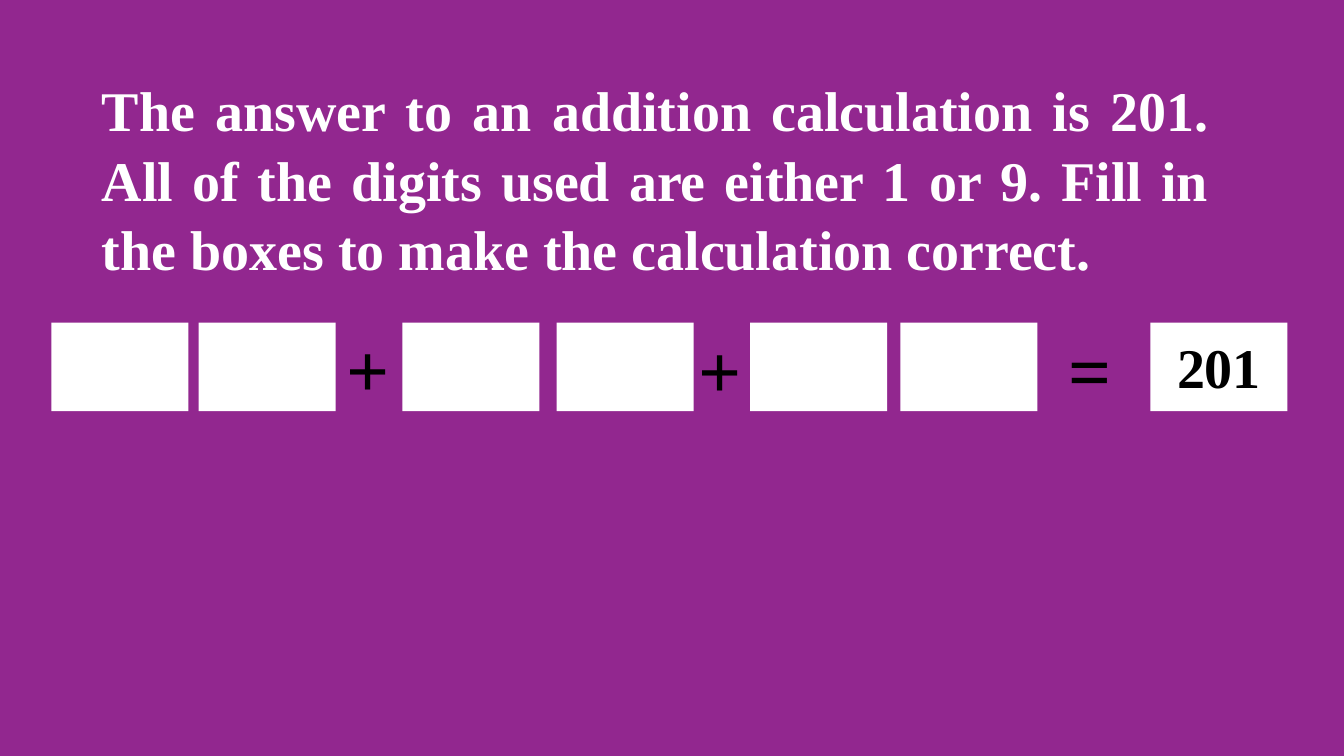
import dataclasses

import pptx
import pptx.dml.color
import pptx.enum.shapes
import pptx.enum.text
import pptx.util


@dataclasses.dataclass(frozen=True)
class Theme:
    purple: str = "92278F"
    white: str = "FFFFFF"
    black: str = "000000"
    font: str = "Times New Roman"
    text_size: int = 40
    sign_size: int = 54


@dataclasses.dataclass(frozen=True)
class Sign:
    symbol: str
    left: float
    top: float
    width: float
    wrap: bool = False


THEME = Theme()
WIDTH, HEIGHT = 13.33, 7.5

# The calculation row: box edges in inches on a shared line
BOX_TOP, BOX_WIDTH, BOX_HEIGHT = 3.2, 1.36, 0.88
DIGIT_LEFTS = (0.51, 1.97, 3.99, 5.52, 7.44, 8.93)
ANSWER_LEFT = 11.41
ANSWER_INSET_X, ANSWER_INSET_Y = 0.08, 0.05
SIGN_HEIGHT = 1.01
SIGNS = (
    Sign("+", 3.34, 3.14, 0.52, wrap=True),
    Sign("=", 10.5, 3.15, 0.71),
    Sign("+", 6.83, 3.15, 0.71),
)


def inches(*lengths: float) -> list[pptx.util.Length]:
    return [pptx.util.Inches(length) for length in lengths]


def colour(code: str) -> pptx.dml.color.RGBColor:
    return pptx.dml.color.RGBColor.from_string(code)


def write(frame, text: str, size: int, code: str, align: str, wrap: bool = True) -> None:
    frame.word_wrap = wrap
    frame.auto_size = pptx.enum.text.MSO_AUTO_SIZE.SHAPE_TO_FIT_TEXT
    frame.vertical_anchor = pptx.enum.text.MSO_ANCHOR.TOP
    paragraph = frame.paragraphs[0]
    paragraph.alignment = pptx.enum.text.PP_ALIGN[align]
    run = paragraph.add_run()
    run.text = text
    run.font.name = THEME.font
    run.font.size = pptx.util.Pt(size)
    run.font.bold = True
    run.font.color.rgb = colour(code)


def add_box(slide, left: float, top: float, width: float, height: float):
    box = slide.shapes.add_shape(
        pptx.enum.shapes.MSO_SHAPE.RECTANGLE, *inches(left, top, width, height))
    box.shadow.inherit = False
    box.fill.solid()
    box.fill.fore_color.rgb = colour(THEME.white)
    box.line.fill.background()
    return box


def add_sign(slide, sign: Sign) -> None:
    symbol = slide.shapes.add_textbox(
        *inches(sign.left, sign.top, sign.width, SIGN_HEIGHT))
    write(symbol.text_frame, sign.symbol, THEME.sign_size, THEME.black, "LEFT", sign.wrap)


def main() -> None:
    deck = pptx.Presentation()
    deck.slide_width, deck.slide_height = inches(WIDTH, HEIGHT)
    slide = deck.slides.add_slide(deck.slide_layouts.get_by_name("Title Only"))
    slide.background.fill.solid()
    slide.background.fill.fore_color.rgb = colour(THEME.purple)

    # Question
    question = slide.shapes.title
    question.left, question.top, question.width, question.height = inches(
        0.91, 0.67, 11.18, 2.12)
    write(question.text_frame,
          "The answer to an addition calculation is 201. All of the digits used are "
          "either 1 or 9. Fill in the boxes to make the calculation correct.",
          THEME.text_size, THEME.white, "JUSTIFY")
    question.text_frame.paragraphs[0].line_spacing = 1.04

    # Empty digit boxes and the answer
    for left in (*DIGIT_LEFTS, ANSWER_LEFT):
        add_box(slide, left, BOX_TOP, BOX_WIDTH, BOX_HEIGHT)
    answer = add_box(slide, ANSWER_LEFT + ANSWER_INSET_X, BOX_TOP + ANSWER_INSET_Y,
                     BOX_WIDTH - 2 * ANSWER_INSET_X, 0.77)
    write(answer.text_frame, "201", THEME.text_size, THEME.black, "CENTER")

    # Signs between the boxes
    for sign in SIGNS:
        add_sign(slide, sign)

    deck.save("out.pptx")


if __name__ == "__main__":
    main()
